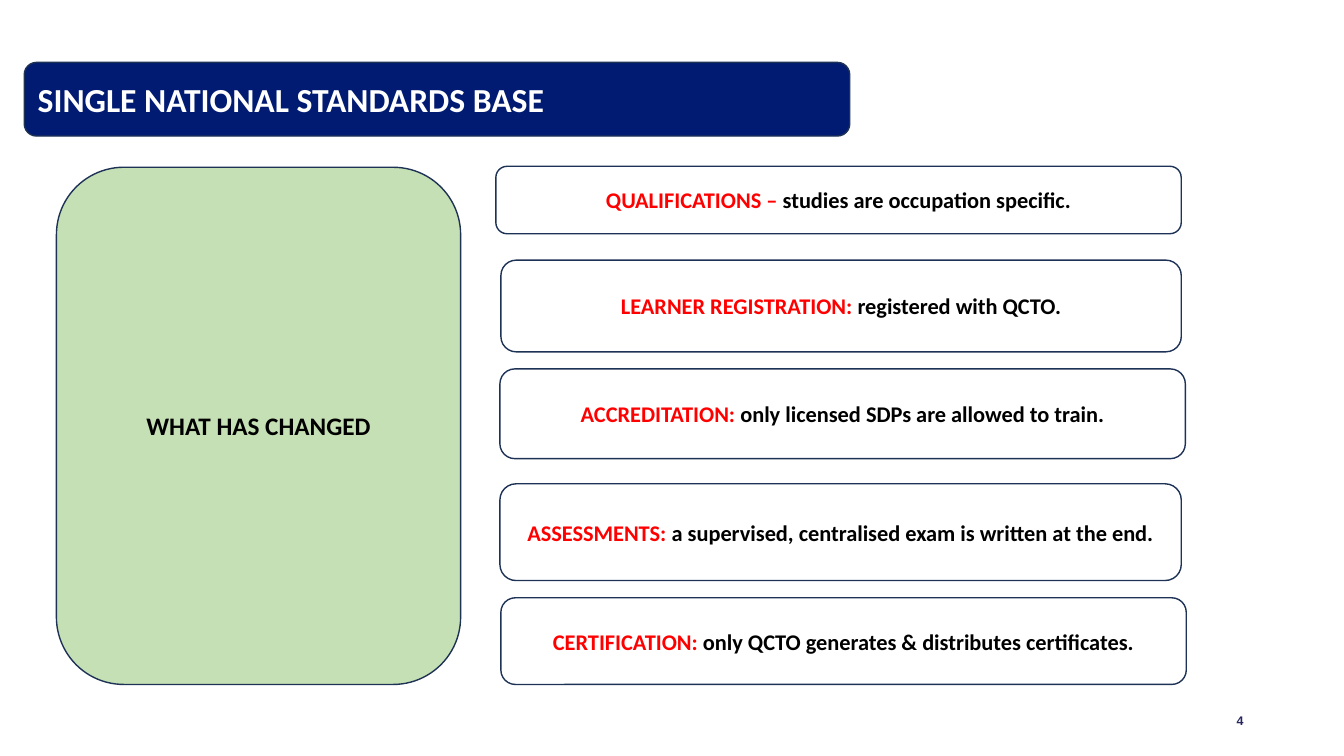
from dataclasses import dataclass

from pptx import Presentation
from pptx.dml.color import RGBColor
from pptx.enum.shapes import MSO_SHAPE
from pptx.enum.text import MSO_ANCHOR, PP_ALIGN
from pptx.util import Pt


@dataclass(frozen=True)
class Theme:
    font: str = "Calibri"
    number_font: str = "Arial"
    navy: str = "001B71"
    outline: str = "1E3256"
    green: str = "C5E0B4"
    white: str = "FFFFFF"
    black: str = "000000"
    red: str = "FF0000"
    number: str = "27265F"
    title_size: float = 24
    panel_size: float = 18
    card_size: float = 16
    number_size: float = 8.9


THEME = Theme()

CARDS = [
    ("QUALIFICATIONS – ", "studies are occupation specific.", (354.2, 118.8, 489.6, 48.2)),
    ("LEARNER REGISTRATION: ", "registered with QCTO.", (357.8, 185.8, 486, 65.5)),
    ("ACCREDITATION:", " only licensed SDPs are allowed to train.", (357.1, 263.5, 489.6, 64.1)),
    ("ASSESSMENTS:", " a supervised, centralised exam is written at the end.", (357.1, 345.6, 486.7, 69.1)),
    ("CERTIFICATION:", " only QCTO generates & distributes certificates.", (357.8, 427, 489.6, 61.9)),
]


def rgb(color):
    return RGBColor.from_string(color)


def write(shape, runs, size, align, font=THEME.font):
    tf = shape.text_frame
    tf.word_wrap = True
    tf.vertical_anchor = MSO_ANCHOR.MIDDLE
    p = tf.paragraphs[0]
    p.alignment = align
    for text, color in runs:
        r = p.add_run()
        r.text = text
        r.font.name = font
        r.font.size = Pt(size)
        r.font.bold = True
        r.font.color.rgb = rgb(color)


def add_box(slide, bounds, fill, runs, size, align=PP_ALIGN.CENTER):
    sp = slide.shapes.add_shape(MSO_SHAPE.ROUNDED_RECTANGLE, *map(Pt, bounds))
    sp.shadow.inherit = False
    sp.fill.solid()
    sp.fill.fore_color.rgb = rgb(fill)
    sp.line.color.rgb = rgb(THEME.outline)
    sp.line.width = Pt(1)
    write(sp, runs, size, align)


def add_page_number(slide, number):
    sp = slide.shapes.add_textbox(Pt(678.2), Pt(500.4), Pt(216), Pt(28.8))
    tf = sp.text_frame
    tf.margin_left = tf.margin_right = Pt(6)
    tf.margin_top = tf.margin_bottom = Pt(3)
    write(sp, [(number, THEME.number)], THEME.number_size, PP_ALIGN.RIGHT, THEME.number_font)


def main():
    prs = Presentation()
    prs.slide_width, prs.slide_height = Pt(960), Pt(540)
    slide = prs.slides.add_slide(prs.slide_layouts[6])

    add_page_number(slide, "4")
    add_box(slide, (40.3, 119.5, 288.7, 369.4), THEME.green,
            [("WHAT HAS CHANGED", THEME.black)], THEME.panel_size)
    add_box(slide, (17.3, 44.6, 589.7, 52.6), THEME.navy,
            [("SINGLE NATIONAL STANDARDS BASE", THEME.white)], THEME.title_size, PP_ALIGN.LEFT)
    for topic, change, bounds in CARDS:
        add_box(slide, bounds, THEME.white,
                [(topic, THEME.red), (change, THEME.black)], THEME.card_size)

    prs.save("out.pptx")


if __name__ == "__main__":
    main()
